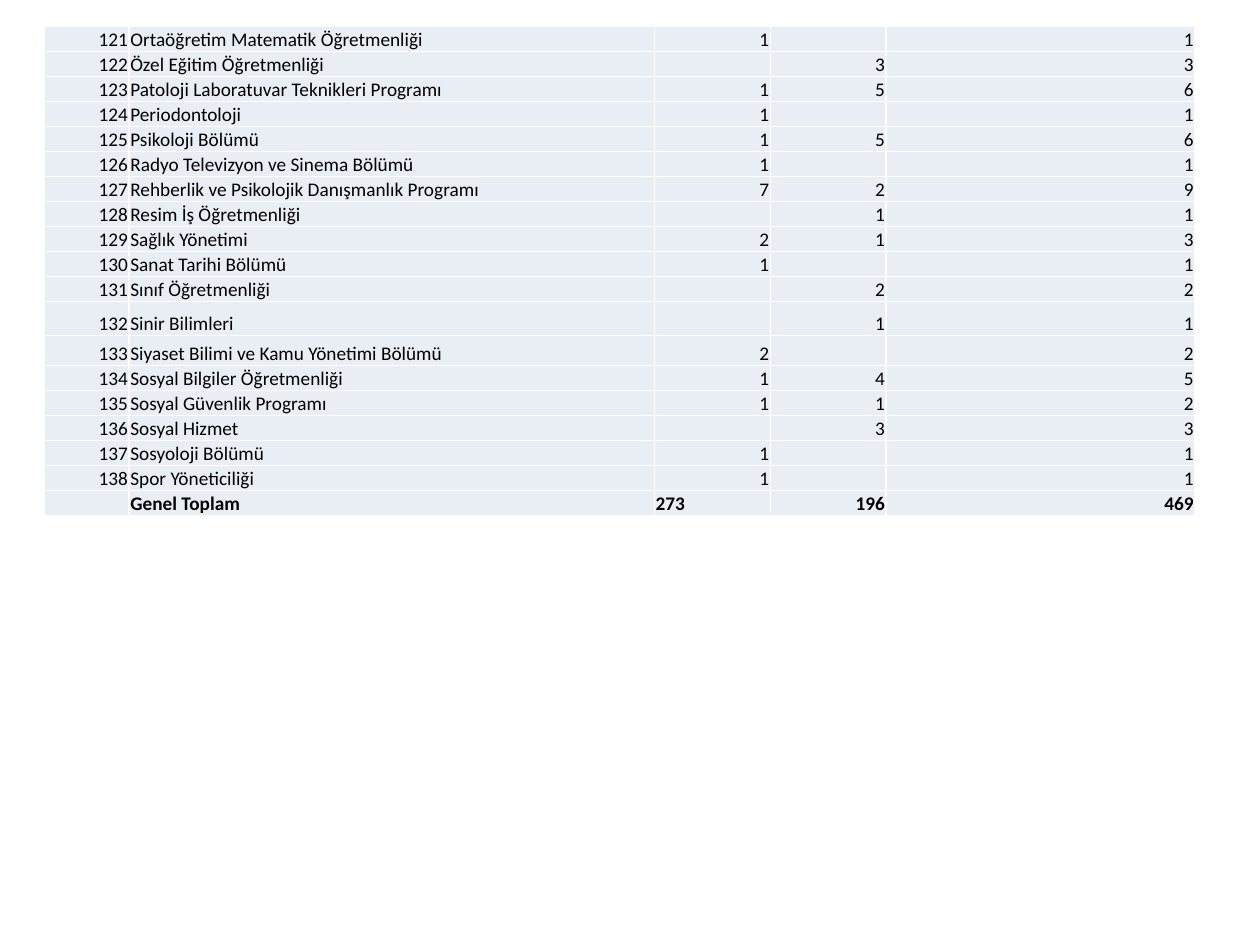
from dataclasses import dataclass

import pptx
import pptx.dml.color
import pptx.enum.text
import pptx.oxml.ns
import pptx.util
from lxml import etree

Pt = pptx.util.Pt
RGB = pptx.dml.color.RGBColor
LEFT = pptx.enum.text.PP_ALIGN.LEFT
RIGHT = pptx.enum.text.PP_ALIGN.RIGHT


@dataclass(frozen=True)
class Theme:
    font: str = "Calibri"
    text_size: float = 11
    text: str = "000000"
    cell_fill: str = "E9EDF4"
    border: str = "FFFFFF"
    border_width: float = 1
    inset: float = 0.7


FIRST_NUMBER = 121
PROGRAMS = [
    ("Ortaöğretim Matematik Öğretmenliği", 1, 0),
    ("Özel Eğitim Öğretmenliği", 0, 3),
    ("Patoloji Laboratuvar Teknikleri Programı", 1, 5),
    ("Periodontoloji", 1, 0),
    ("Psikoloji Bölümü", 1, 5),
    ("Radyo Televizyon ve Sinema Bölümü", 1, 0),
    ("Rehberlik ve Psikolojik Danışmanlık Programı", 7, 2),
    ("Resim İş Öğretmenliği", 0, 1),
    ("Sağlık Yönetimi", 2, 1),
    ("Sanat Tarihi Bölümü", 1, 0),
    ("Sınıf Öğretmenliği", 0, 2),
    ("Sinir Bilimleri", 0, 1),
    ("Siyaset Bilimi ve Kamu Yönetimi Bölümü", 2, 0),
    ("Sosyal Bilgiler Öğretmenliği", 1, 4),
    ("Sosyal Güvenlik Programı", 1, 1),
    ("Sosyal Hizmet", 0, 3),
    ("Sosyoloji Bölümü", 1, 0),
    ("Spor Yöneticiliği", 1, 0),
]
GRAND_TOTAL = ("Genel Toplam", 273, 196)

COLUMN_WIDTHS = [48.3, 300.2, 66.2, 66.2, 176.4]
COLUMN_ALIGNMENTS = [RIGHT, LEFT, RIGHT, RIGHT, RIGHT]
GRAND_TOTAL_ALIGNMENTS = [RIGHT, LEFT, LEFT, RIGHT, RIGHT]
ROW_HEIGHT = 14.3
SPECIAL_ROW_HEIGHTS = {121: 8.8, 132: 19.4, 133: 17.2}


def table_row(number, name, first, second):
    """Texts of one row; a zero count is left blank."""
    counts = [str(count or "") for count in (first, second, first + second)]
    return [str(number), name, *counts]


class SlideBuilder:
    def __init__(self, presentation, theme):
        self.theme = theme
        self.slide = presentation.slides.add_slide(presentation.slide_layouts[6])

    def table(self, left, top, widths, heights):
        frame = self.slide.shapes.add_table(
            len(heights), len(widths), Pt(left), Pt(top), Pt(sum(widths)), Pt(sum(heights))
        )
        table = frame.table
        table.first_row = table.horz_banding = False
        for column, width in zip(table.columns, widths):
            column.width = Pt(width)
        for row, height in zip(table.rows, heights):
            row.height = Pt(height)
        return table

    def row(self, row, texts, alignments, bold=False):
        for cell, text, alignment in zip(row.cells, texts, alignments):
            self.cell(cell, text, alignment, bold)

    def cell(self, cell, text, alignment, bold):
        theme = self.theme
        cell.margin_left = cell.margin_top = cell.margin_right = Pt(theme.inset)
        cell.margin_bottom = 0
        cell.vertical_anchor = pptx.enum.text.MSO_ANCHOR.BOTTOM
        self.borders(cell)
        cell.fill.solid()
        cell.fill.fore_color.rgb = RGB.from_string(theme.cell_fill)

        paragraph = cell.text_frame.paragraphs[0]
        paragraph.alignment = alignment
        paragraph.font.name = theme.font
        paragraph.font.size = Pt(theme.text_size)
        paragraph.font.bold = bold
        paragraph.font.color.rgb = RGB.from_string(theme.text)
        if text:
            run = paragraph.add_run()
            run.text = text
            run.font.size = Pt(theme.text_size)
            run.font.bold = bold
        else:
            self.blank_line_size(paragraph)

    def blank_line_size(self, paragraph):
        """Keep an empty cell from growing its row to the default type size."""
        end = etree.SubElement(paragraph._p, pptx.oxml.ns.qn("a:endParaRPr"))
        end.set("sz", str(round(self.theme.text_size * 100)))

    def borders(self, cell):
        qn = pptx.oxml.ns.qn
        properties = cell._tc.get_or_add_tcPr()
        for side in ("a:lnL", "a:lnR", "a:lnT", "a:lnB"):
            line = etree.SubElement(properties, qn(side), w=str(Pt(self.theme.border_width)))
            fill = etree.SubElement(line, qn("a:solidFill"))
            etree.SubElement(fill, qn("a:srgbClr"), val=self.theme.border)


def main():
    presentation = pptx.Presentation()
    presentation.slide_width, presentation.slide_height = Pt(720), Pt(540)
    builder = SlideBuilder(presentation, Theme())

    numbers = range(FIRST_NUMBER, FIRST_NUMBER + len(PROGRAMS))
    heights = [SPECIAL_ROW_HEIGHTS.get(number, ROW_HEIGHT) for number in numbers]
    table = builder.table(25.5, 15.2, COLUMN_WIDTHS, heights + [ROW_HEIGHT])

    *program_rows, grand_total_row = table.rows
    for row, number, program in zip(program_rows, numbers, PROGRAMS):
        builder.row(row, table_row(number, *program), COLUMN_ALIGNMENTS)
    builder.row(
        grand_total_row, table_row("", *GRAND_TOTAL), GRAND_TOTAL_ALIGNMENTS, bold=True
    )

    presentation.save("out.pptx")


if __name__ == "__main__":
    main()
